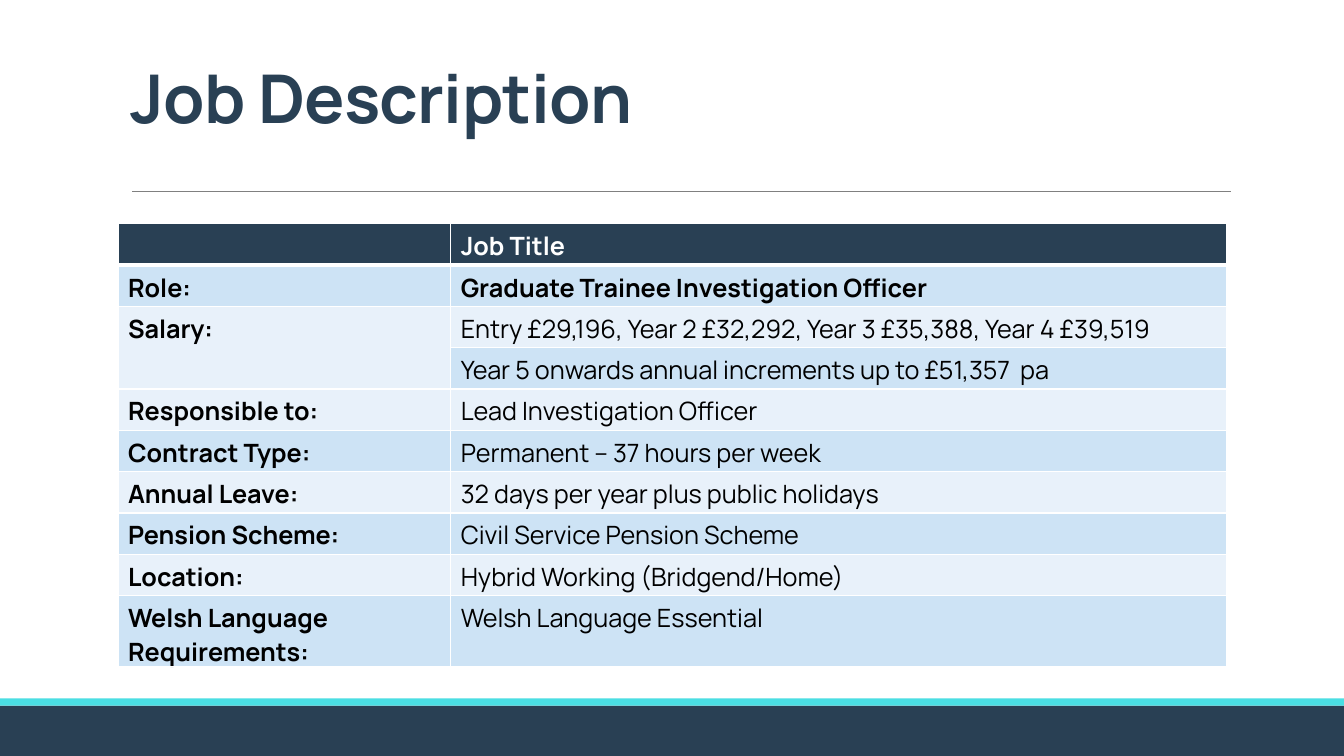
import lxml.etree
import pptx
import pptx.dml.color
import pptx.enum.shapes
import pptx.enum.text
import pptx.oxml.ns
import pptx.util

Inches = pptx.util.Inches
Pt = pptx.util.Pt
RGBColor = pptx.dml.color.RGBColor
qn = pptx.oxml.ns.qn

NAVY = RGBColor(0x29, 0x40, 0x54)
AQUA = RGBColor(0x4A, 0xDE, 0xE3)
GREY = RGBColor(0x80, 0x80, 0x80)
WHITE = RGBColor(0xFF, 0xFF, 0xFF)
BLACK = RGBColor(0, 0, 0)
BANDS = [RGBColor(0xE8, 0xF1, 0xFA), RGBColor(0xCD, 0xE3, 0xF5)]
FONT = "Manrope"

JOB_ROWS = [
    ("", "Job Title"),
    ("Role:", "Graduate Trainee Investigation Officer"),
    ("Salary:", "Entry £29,196, Year 2 £32,292, Year 3 £35,388, Year 4 £39,519"),
    ("", "Year 5 onwards annual increments up to £51,357  pa"),
    ("Responsible to:", "Lead Investigation Officer"),
    ("Contract Type:", "Permanent – 37 hours per week"),
    ("Annual Leave:", "32 days per year plus public holidays"),
    ("Pension Scheme:", "Civil Service Pension Scheme"),
    ("Location:", "Hybrid Working (Bridgend/Home)"),
    ("Welsh Language Requirements:", "Welsh Language Essential"),
]
SALARY_ROW = 2
COLUMN_WIDTHS = [3.3, 7.7]
ROW_HEIGHT = 0.41


def set_font(p, size, color, bold):
    p.font.name = FONT
    p.font.size = Pt(size)
    p.font.color.rgb = color
    p.font.bold = bold


def add_bar(slide, top, height, color):
    sp = slide.shapes.add_shape(
        pptx.enum.shapes.MSO_SHAPE.RECTANGLE,
        Inches(0), Inches(top), Inches(13.33), Inches(height))
    sp.shadow.inherit = False
    sp.fill.solid()
    sp.fill.fore_color.rgb = color
    sp.line.fill.background()


def add_rule(slide, left, right, y):
    line = slide.shapes.add_connector(
        pptx.enum.shapes.MSO_CONNECTOR.STRAIGHT,
        Inches(left), Inches(y), Inches(right), Inches(y))
    line.line.color.rgb = GREY
    line.line.width = Pt(0.5)
    lxml.etree.SubElement(line._element.spPr, qn("a:effectLst"))


def add_title(slide, text):
    sp = slide.shapes.add_textbox(Inches(1.2), Inches(0.31), Inches(11), Inches(1.1))
    tf = sp.text_frame
    tf.word_wrap = True
    tf.vertical_anchor = pptx.enum.text.MSO_ANCHOR.BOTTOM
    p = tf.paragraphs[0]
    p.line_spacing = 0.85
    r = p.add_run()
    r.text = text
    set_font(p, 48, NAVY, True)
    r.font._element.set("spc", "-50")


def set_borders(cell, bottom_width):
    """Draw white edges, 1 pt except for the bottom one."""
    tcPr = cell._tc.get_or_add_tcPr()
    for edge, width in (("L", 1), ("R", 1), ("T", 1), ("B", bottom_width)):
        ln = lxml.etree.SubElement(tcPr, qn(f"a:ln{edge}"), w=str(Pt(width)))
        fill = lxml.etree.SubElement(ln, qn("a:solidFill"))
        lxml.etree.SubElement(fill, qn("a:srgbClr"), val=str(WHITE))


def fill_cell(cell, text, row, col):
    header = row == 0
    set_borders(cell, 3 if header else 1)
    cell.fill.solid()
    cell.fill.fore_color.rgb = NAVY if header else BANDS[row % 2]
    cell.text = text
    bold = col == 0 or row <= 1
    set_font(cell.text_frame.paragraphs[0], 18, WHITE if header else BLACK, bold)


def add_job_table(slide):
    table = slide.shapes.add_table(
        len(JOB_ROWS), len(COLUMN_WIDTHS), Inches(1.17), Inches(2.22),
        Inches(sum(COLUMN_WIDTHS)), Inches(ROW_HEIGHT * len(JOB_ROWS))).table
    for column, width in zip(table.columns, COLUMN_WIDTHS):
        column.width = Inches(width)
    for row, texts in enumerate(JOB_ROWS):
        table.rows[row].height = Inches(ROW_HEIGHT)
        for col, text in enumerate(texts):
            fill_cell(table.cell(row, col), text, row, col)
    table.cell(SALARY_ROW, 0).merge(table.cell(SALARY_ROW + 1, 0))


def main():
    prs = pptx.Presentation()
    prs.slide_width = Inches(13.33)
    prs.slide_height = Inches(7.5)
    slide = prs.slides.add_slide(prs.slide_layouts[6])
    add_bar(slide, 7, 0.5, NAVY)
    add_bar(slide, 6.93, 0.07, AQUA)
    add_rule(slide, 1.31, 12.21, 1.9)
    add_title(slide, "Job Description")
    add_job_table(slide)
    prs.save("out.pptx")


if __name__ == "__main__":
    main()
